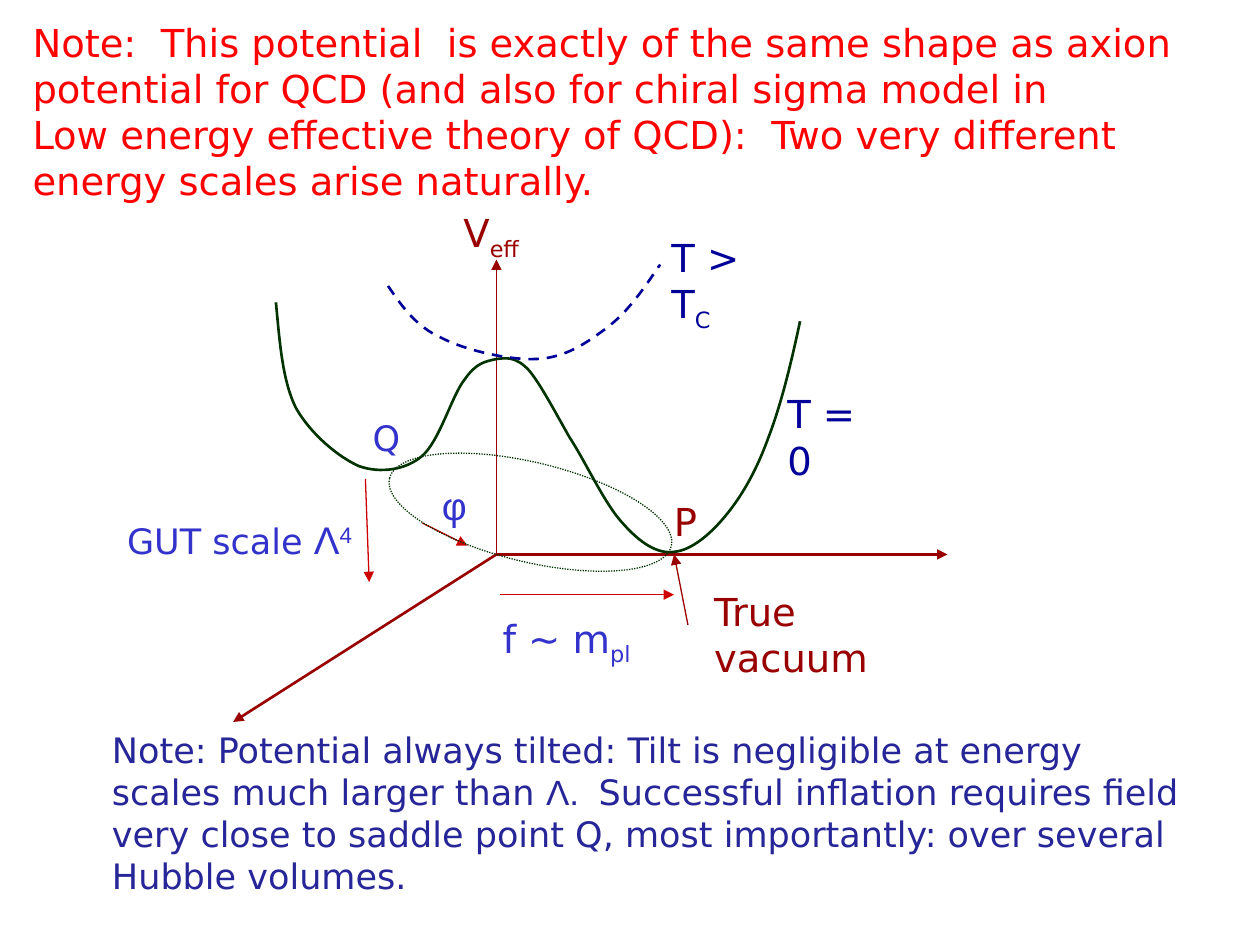
"""Build a slide showing the tilted effective potential above and below the critical temperature."""

from lxml.etree import SubElement
from pptx import Presentation
from pptx.dml.color import RGBColor
from pptx.enum.dml import MSO_LINE
from pptx.enum.shapes import MSO_CONNECTOR, MSO_SHAPE
from pptx.oxml.ns import qn
from pptx.util import Inches, Pt

COLORS = {
    "note": "FF0000",
    "remark": "262699",
    "axis": "990000",
    "potential": "003300",
    "hot": "000099",
    "scale": "CC0000",
    "label": "3333CC",
}
SANS, GREEK = "DejaVu Sans", "Arial"


def add_text(shapes, box, color, paragraphs, wrap=True):
    """Add a text box whose paragraphs are lists of (text, size, font, baseline) runs."""
    text_frame = shapes.add_textbox(*map(Inches, box)).text_frame
    text_frame.word_wrap = wrap
    for index, runs in enumerate(paragraphs):
        paragraph = text_frame.add_paragraph() if index else text_frame.paragraphs[0]
        for text, size, font, baseline in runs:
            run = paragraph.add_run()
            run.text = text
            run.font.size = Pt(size)
            run.font.name = font
            run.font.color.rgb = RGBColor.from_string(COLORS[color])
            if baseline:
                run.font._element.set("baseline", str(baseline * 1000))


def style_outline(shape, color, width, dash=None):
    """Give a shape a plain outline."""
    shape.line.color.rgb = RGBColor.from_string(COLORS[color])
    shape.line.width = Pt(width)
    if dash:
        shape.line.dash_style = dash


presentation = Presentation()
presentation.slide_width = Inches(10)
presentation.slide_height = Inches(7.5)
slide = presentation.slides.add_slide(presentation.slide_layouts[6])

add_text(slide.shapes, (0.16, 0.1, 9.42, 1.6), "note", [
    [("Note:  This potential  is exactly of the same shape as axion potential for QCD "
      "(and also for chiral sigma model in", 22, SANS, 0)],
    [("Low energy effective theory of QCD):  Two very different", 22, SANS, 0)],
    [("energy scales arise naturally.", 22, SANS, 0)],
])
add_text(slide.shapes, (0.79, 5.73, 8.68, 1.45), "remark", [
    [("Note: Potential always tilted: Tilt is negligible at energy scales much larger than ",
      20, SANS, 0),
     ("Λ.  ", 20, GREEK, 0),
     ("Successful inflation requires field", 20, SANS, 0)],
    [("very close to saddle point Q, most importantly: over several", 20, SANS, 0)],
    [("Hubble volumes.", 20, SANS, 0)],
])

diagram = slide.shapes.add_group_shape().shapes

origin = (3.94, 4.4)
arrows = [
    (origin, (7.52, 4.4), "axis", 1.5),
    (origin, (1.85, 5.73), "axis", 1.5),
    (origin, (3.94, 2.06), "axis", 0.75),
    ((5.46, 4.96), (5.35, 4.4), "axis", 0.75),
    ((2.9, 3.8), (2.93, 4.62), "scale", 0.75),
    ((3.97, 4.72), (5.35, 4.72), "scale", 0.75),
    ((3.35, 4.15), (3.71, 4.33), "scale", 0.75),
]
for start, end, color, width in arrows:
    arrow = diagram.add_connector(MSO_CONNECTOR.STRAIGHT, *map(Inches, start + end))
    style_outline(arrow, color, width)
    SubElement(arrow.line._get_or_add_ln(), qn("a:tailEnd"), type="triangle")
    SubElement(arrow._element.spPr, qn("a:effectLst"))

curves = [
    ("potential", None, [
        (2.19, 2.4),
        (2.22, 2.71), (2.24, 3.02), (2.35, 3.24),
        (2.47, 3.45), (2.69, 3.63), (2.85, 3.7),
        (3.02, 3.76), (3.22, 3.73), (3.35, 3.62),
        (3.49, 3.5), (3.59, 3.13), (3.69, 3.01),
        (3.78, 2.88), (3.85, 2.87), (3.94, 2.85),
        (4.02, 2.84), (4.09, 2.83), (4.19, 2.93),
        (4.28, 3.03), (4.4, 3.26), (4.52, 3.47),
        (4.65, 3.67), (4.8, 4), (4.94, 4.15),
        (5.08, 4.31), (5.22, 4.4), (5.35, 4.38),
        (5.49, 4.37), (5.65, 4.23), (5.77, 4.08),
        (5.9, 3.92), (6.01, 3.72), (6.1, 3.47),
        (6.2, 3.21), (6.28, 2.88), (6.35, 2.55),
    ]),
    ("hot", MSO_LINE.DASH, [
        (3.08, 2.27),
        (3.19, 2.43), (3.3, 2.59), (3.5, 2.68),
        (3.69, 2.78), (4.04, 2.86), (4.26, 2.85),
        (4.49, 2.84), (4.66, 2.72), (4.82, 2.6),
        (4.99, 2.47), (5.11, 2.29), (5.24, 2.1),
    ]),
]
for color, dash, points in curves:
    points = [(Inches(x), Inches(y)) for x, y in points]
    builder = diagram.build_freeform(*points[0])
    builder.add_line_segments(points[1:], close=False)
    curve = builder.convert_to_shape()
    curve.shadow.inherit = False
    curve.fill.background()
    style_outline(curve, color, 1.5, dash)
    segments = list(curve._element.iter(qn("a:lnTo")))
    outline = segments[0].getparent()
    for first in range(0, len(segments), 3):
        bezier = SubElement(outline, qn("a:cubicBezTo"))
        for segment in segments[first:first + 3]:
            bezier.append(segment[0])
            outline.remove(segment)

vacuum_ring = diagram.add_shape(MSO_SHAPE.OVAL, *map(Inches, (3.06, 3.67, 2.3, 0.79)))
vacuum_ring.rotation = 13.5
vacuum_ring.shadow.inherit = False
vacuum_ring.fill.background()
style_outline(vacuum_ring, "potential", 0.75, MSO_LINE.ROUND_DOT)

labels = [
    ((5.57, 4.62, 1.97, 0.5), "axis", True, [("True vacuum", 22, SANS, 0)]),
    ((3.58, 1.61, 0.69, 0.5), "axis", False, [("V", 22, SANS, 0), ("eff", 22, SANS, -25)]),
    ((5.23, 1.81, 1.11, 0.5), "hot", True, [("T > T", 22, SANS, 0), ("C", 22, SANS, -25)]),
    ((6.15, 3.05, 0.93, 0.5), "hot", True, [("T = 0", 22, SANS, 0)]),
    ((5.25, 3.9, 0.39, 0.5), "axis", False, [("P", 22, SANS, 0)]),
    ((0.91, 4.05, 2.09, 0.47), "label", True,
     [("GUT scale ", 20, SANS, 0), ("Λ", 22, GREEK, 0), ("4", 22, GREEK, 30)]),
    ((3.89, 4.83, 1.31, 0.47), "label", True, [("f ~ m", 22, SANS, 0), ("pl", 22, SANS, -25)]),
    ((3.41, 3.78, 0.4, 0.47), "label", False, [("φ", 22, GREEK, 0)]),
    ((2.86, 3.26, 0.42, 0.44), "label", False, [("Q", 20, SANS, 0)]),
]
for box, color, wrap, runs in labels:
    add_text(diagram, box, color, [runs], wrap)

presentation.save("out.pptx")
